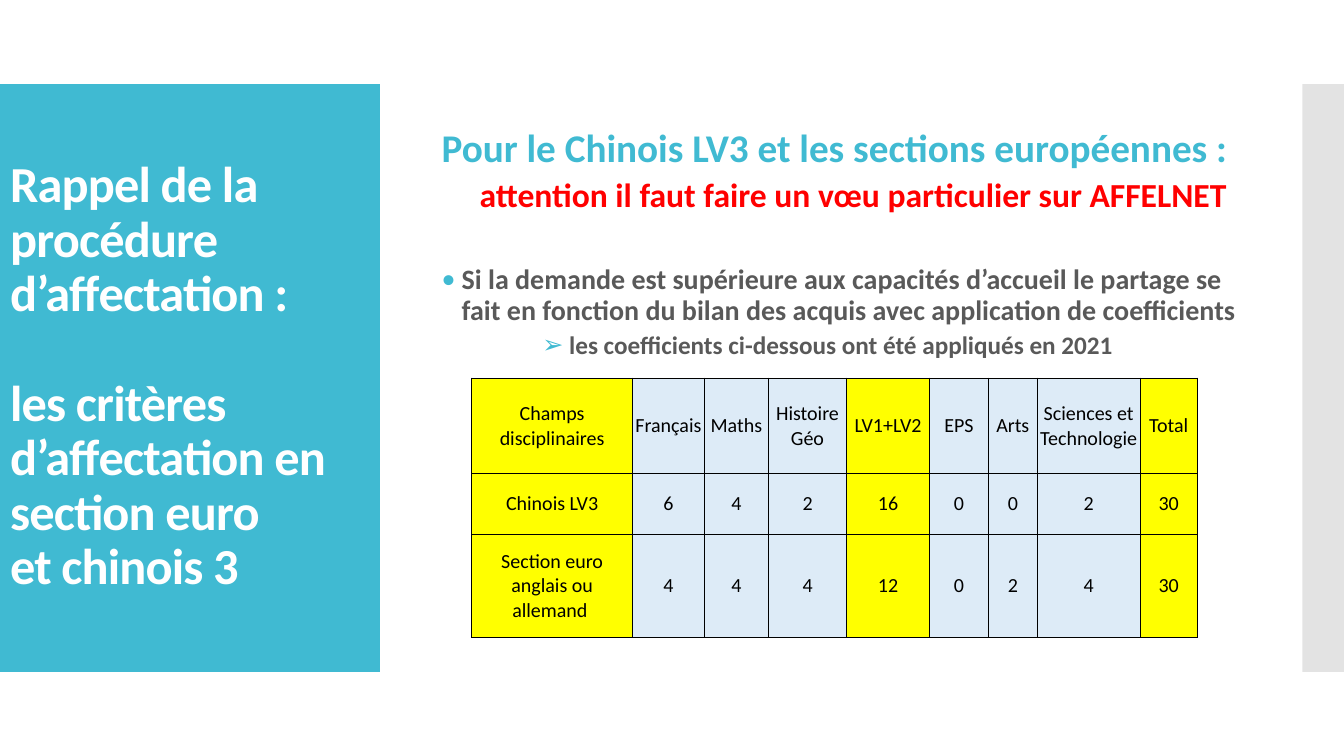
"""Builds the slide on assignment criteria for the European sections and Chinese LV3."""
from dataclasses import dataclass

from lxml import etree
from pptx import Presentation
from pptx import util as u
from pptx.dml.color import RGBColor
from pptx.enum import shapes, text
from pptx.oxml import ns

TEAL = RGBColor(0x40, 0xBA, 0xD2)
SILVER = RGBColor(0xC8, 0xC8, 0xC8)
WHITE = RGBColor(0xFF, 0xFF, 0xFF)
RED = RGBColor(0xFF, 0x00, 0x00)
GREY = RGBColor(0x59, 0x59, 0x59)
BLACK = RGBColor(0x00, 0x00, 0x00)
YELLOW = RGBColor(0xFF, 0xFF, 0x00)
PALE_BLUE = RGBColor(0xDD, 0xEB, 0xF7)
FONT = "Calibri"


@dataclass(frozen=True)
class Panel:
    left: float
    width: float
    color: RGBColor
    opacity: int = 100


@dataclass(frozen=True)
class Line:
    wording: str
    size: float
    color: RGBColor
    level: int = 1
    margin: float = 75.6
    indent: float = 0
    bullet: str = ""
    before: float = 2.5
    align: text.PP_ALIGN = text.PP_ALIGN.LEFT


PANELS = (Panel(0, 271.4, TEAL), Panel(930.2, 29.8, SILVER, 50))
TITLE_PARTS = (
    ("Rappel de la procédure d’affectation :",),
    ("les critères d’affectation en section euro ", "et chinois 3"),
)
BODY_LINES = (
    Line("Pour le Chinois LV3 et les sections européennes :", 28, TEAL),
    Line("attention il faut faire un vœu particulier sur AFFELNET", 24, RED,
         align=text.PP_ALIGN.CENTER),
    Line("Si la demande est supérieure aux capacités d’accueil le partage se fait "
         "en fonction du bilan des acquis avec application de coefficients",
         20, GREY, margin=90, indent=-14.4, bullet="•", before=34),
    Line(" les coefficients ci-dessous ont été appliqués en 2021", 18, GREY,
         level=3, margin=162, indent=-14.4, bullet="➢"),
)
COEFFICIENTS = (
    ("Champs disciplinaires", "Français", "Maths", "Histoire Géo", "LV1+LV2",
     "EPS", "Arts", "Sciences et Technologie", "Total"),
    ("Chinois LV3", "6", "4", "2", "16", "0", "0", "2", "30"),
    ("Section euro anglais ou allemand ", "4", "4", "4", "12", "0", "2", "4", "30"),
)
COLUMN_WIDTHS = (114.8, 51.4, 45.7, 55.9, 59.2, 42, 35, 73.5, 40.9)
ROW_HEIGHTS = (68, 43.5, 73.5)
YELLOW_COLUMNS = {0, 4, 8}


def child(parent, tag: str, **attributes: str):
    return etree.SubElement(parent, ns.qn(tag), attributes)


def place(shape, left: float, top: float, width: float, height: float) -> None:
    shape.left, shape.top = u.Pt(left), u.Pt(top)
    shape.width, shape.height = u.Pt(width), u.Pt(height)


def add_span(para, wording: str, size: float, color: RGBColor, bold: bool):
    span = para.add_run()
    span.text = wording
    span.font.name, span.font.size, span.font.bold = FONT, u.Pt(size), bold
    span.font.color.rgb = color
    return span


def next_paragraph(frame, index: int):
    return frame.add_paragraph() if index else frame.paragraphs[0]


def draw_panel(page, panel: Panel, depth: int) -> None:
    box = page.shapes.add_shape(shapes.MSO_SHAPE.RECTANGLE, u.Pt(panel.left), u.Pt(60),
                                u.Pt(panel.width), u.Pt(420))
    box.shadow.inherit = False
    box.fill.solid()
    box.fill.fore_color.rgb = panel.color
    box.line.fill.background()
    if panel.opacity < 100:
        color = box._element.spPr.find(".//" + ns.qn("a:srgbClr"))
        child(color, "a:alpha", val=str(panel.opacity * 1000))
    page.shapes._spTree.insert(2 + depth, box._element)


def fill_title(title) -> None:
    place(title, 0, 88.6, 280.8, 362.2)
    frame = title.text_frame
    frame.word_wrap, frame.auto_size = True, text.MSO_AUTO_SIZE.NONE
    frame.vertical_anchor = text.MSO_ANCHOR.MIDDLE
    for index, part in enumerate(TITLE_PARTS):
        para = next_paragraph(frame, index)
        para.alignment, para.line_spacing = text.PP_ALIGN.LEFT, 0.9
        para.space_before = u.Pt(39.5 * index)
        for row, wording in enumerate(part):
            if row:
                para.add_line_break()
            span = add_span(para, wording, 36, WHITE, True)
            span.font._element.set("spc", "-60")


def fill_body(body) -> None:
    place(body, 232.6, 52.6, 678.2, 431.3)
    frame = body.text_frame
    frame.word_wrap, frame.auto_size = True, text.MSO_AUTO_SIZE.NONE
    frame.vertical_anchor, frame.margin_top = text.MSO_ANCHOR.TOP, u.Pt(39.5)
    for index, line in enumerate(BODY_LINES):
        para = next_paragraph(frame, index)
        para.level, para.alignment, para.line_spacing = line.level, line.align, 0.9
        para.space_before, para.space_after = u.Pt(line.before), u.Pt(2.5)
        settings = para._p.get_or_add_pPr()
        settings.set("marL", str(u.Pt(line.margin)))
        settings.set("indent", str(u.Pt(line.indent)))
        if line.bullet:
            child(child(settings, "a:buClr"), "a:srgbClr", val=str(TEAL))
            child(settings, "a:buFont", typeface=FONT)
            child(settings, "a:buChar", char=line.bullet)
        else:
            child(settings, "a:buNone")
        add_span(para, line.wording, line.size, line.color, True)


def fill_cell(cell, wording: str, color: RGBColor) -> None:
    cell.margin_left = cell.margin_right = cell.margin_top = u.Pt(0.7)
    cell.margin_bottom = u.Pt(0)
    cell.vertical_anchor = text.MSO_ANCHOR.MIDDLE
    para = cell.text_frame.paragraphs[0]
    para.alignment = text.PP_ALIGN.CENTER
    add_span(para, wording, 14.3, BLACK, False)
    settings = cell._tc.get_or_add_tcPr()
    for side in ("a:lnL", "a:lnR", "a:lnT", "a:lnB"):
        border = child(settings, side, w=str(u.Pt(0.5)))
        child(child(border, "a:solidFill"), "a:srgbClr", val=str(BLACK))
    cell.fill.solid()
    cell.fill.fore_color.rgb = color


def draw_table(page) -> None:
    table = page.shapes.add_table(len(ROW_HEIGHTS), len(COLUMN_WIDTHS), u.Pt(337), u.Pt(270),
                                  u.Pt(sum(COLUMN_WIDTHS)), u.Pt(sum(ROW_HEIGHTS))).table
    table.first_row = table.horz_banding = False
    for column, width in zip(table.columns, COLUMN_WIDTHS):
        column.width = u.Pt(width)
    for row, height, wordings in zip(table.rows, ROW_HEIGHTS, COEFFICIENTS):
        row.height = u.Pt(height)
        for index, (cell, wording) in enumerate(zip(row.cells, wordings)):
            fill_cell(cell, wording, YELLOW if index in YELLOW_COLUMNS else PALE_BLUE)


def main() -> None:
    deck = Presentation()
    deck.slide_width, deck.slide_height = u.Pt(960), u.Pt(540)
    page = deck.slides.add_slide(deck.slide_layouts[1])
    for depth, panel in enumerate(PANELS):
        draw_panel(page, panel, depth)
    fill_title(page.shapes.title)
    fill_body(page.placeholders[1])
    draw_table(page)
    deck.save("out.pptx")


if __name__ == "__main__":
    main()
